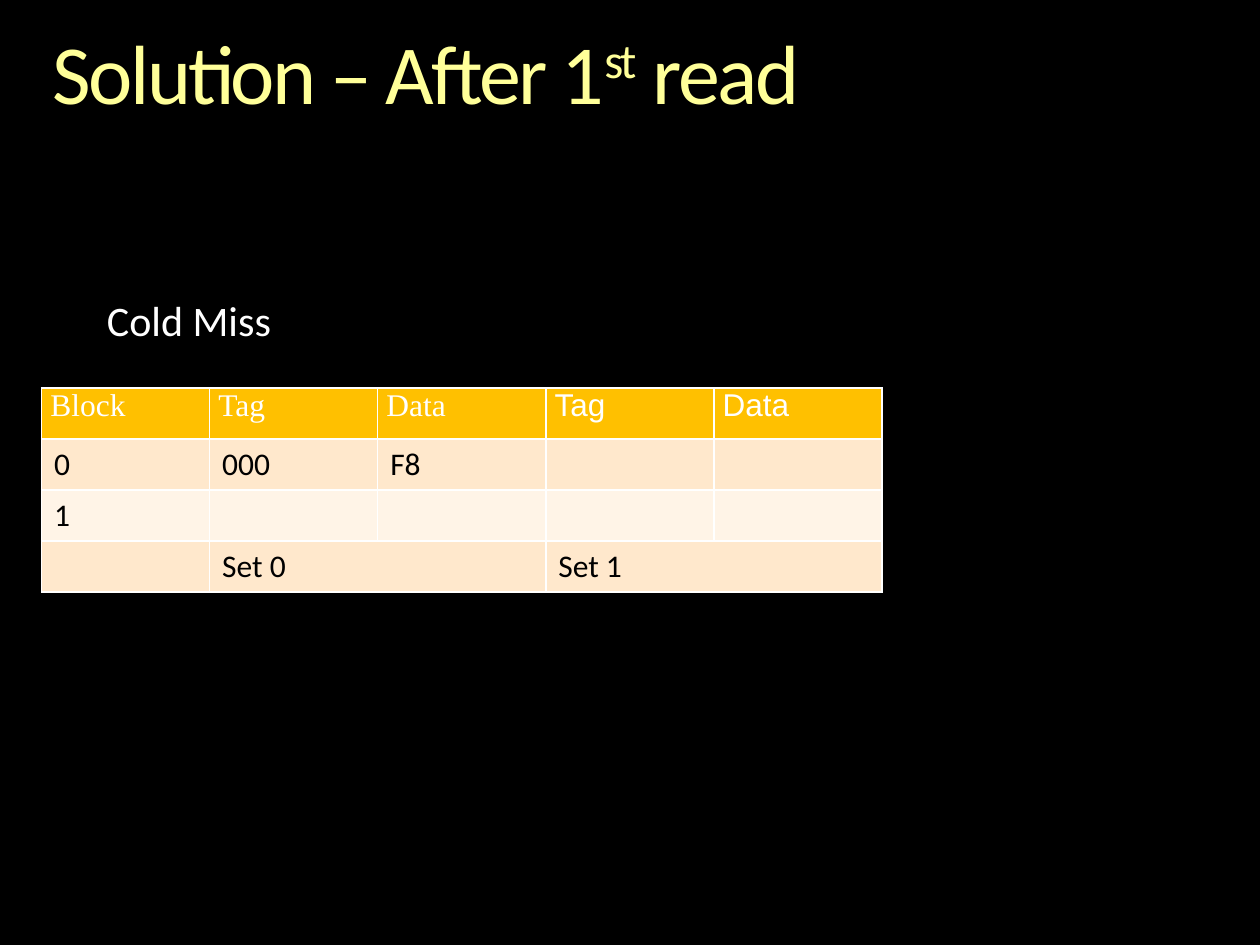
from pptx import Presentation
from pptx.dml.color import RGBColor
from pptx.enum.text import PP_ALIGN
from pptx.oxml import parse_xml
from pptx.oxml.ns import nsdecls
from pptx.util import Inches, Pt

BLACK = RGBColor(0, 0, 0)
WHITE = RGBColor(255, 255, 255)
YELLOW = RGBColor(0xFF, 0xFF, 0x99)
GOLD = RGBColor(0xFF, 0xC0, 0x00)
PEACH = RGBColor(0xFF, 0xE8, 0xCC)
CREAM = RGBColor(0xFF, 0xF4, 0xE7)

HEADS = ["Block", "Tag", "Data", "Tag", "Data"]
HEAD_FONTS = ["Times New Roman"] * 3 + ["Arial"] * 2
ROWS = [
    HEADS,
    ["0", "000", "F8", "", ""],
    ["1", "", "", "", ""],
    ["", "Set 0", "", "Set 1", ""],
]
FILLS = [GOLD, PEACH, CREAM, PEACH]


def style(font, size, color, name="Calibri"):
    font.size = Pt(size)
    font.color.rgb = color
    font.name = name


def add_box(slide, left, top, width, height):
    box = slide.shapes.add_textbox(
        Inches(left), Inches(top), Inches(width), Inches(height))
    box.text_frame.word_wrap = True
    return box.text_frame


def add_title(slide):
    frame = add_box(slide, 0.42, 0.25, 9.17, 0.73)
    frame.margin_left = frame.margin_right = 0
    frame.margin_top = frame.margin_bottom = 0
    line = frame.paragraphs[0]
    line.line_spacing = 0.9
    for text in ("Solution – After 1", "st", " read"):
        run = line.add_run()
        run.text = text
        style(run.font, 48, YELLOW)
        props = run.font._element
        props.set("spc", "-150")
        if text == "st":
            props.set("baseline", "30000")


def add_label(slide):
    frame = add_box(slide, 0.75, 2.29, 3.58, 0.5)
    frame.text = "Cold Miss"
    style(frame.paragraphs[0].runs[0].font, 24, WHITE)


def add_edges(cell):
    """Draw a thin white line on each side of the cell."""
    props = cell._tc.get_or_add_tcPr()
    for spot, side in enumerate(("lnL", "lnR", "lnT", "lnB")):
        props.insert(spot, parse_xml(
            f'<a:{side} {nsdecls("a")} w="{Pt(1)}"><a:solidFill>'
            f'<a:srgbClr val="{WHITE}"/></a:solidFill></a:{side}>'))


def fill_cell(cell, text, fill, color, name):
    cell.text = text
    cell.fill.solid()
    cell.fill.fore_color.rgb = fill
    add_edges(cell)
    line = cell.text_frame.paragraphs[0]
    style(line.font, 18, color, name)
    for run in line.runs:
        style(run.font, 18, color, name)


def pad_head(cell):
    cell.margin_left = cell.margin_right = Inches(0.07)
    cell.margin_top = cell.margin_bottom = 0
    line = cell.text_frame.paragraphs[0]
    line.alignment = PP_ALIGN.JUSTIFY
    line.space_after = Pt(4)


def add_cache(slide):
    table = slide.shapes.add_table(
        len(ROWS), len(HEADS), Inches(0.33), Inches(3.08),
        Inches(6.67), Inches(1.62)).table
    for r, (texts, fill) in enumerate(zip(ROWS, FILLS)):
        for c, text in enumerate(texts):
            cell = table.cell(r, c)
            if r == 0:
                fill_cell(cell, text, fill, WHITE, HEAD_FONTS[c])
                pad_head(cell)
            else:
                fill_cell(cell, text, fill, BLACK, "Calibri")
    for c in (1, 3):
        table.cell(3, c).merge(table.cell(3, c + 1))


def main():
    deck = Presentation()
    deck.slide_width = Inches(10)
    deck.slide_height = Inches(7.5)
    slide = deck.slides.add_slide(deck.slide_layouts[6])
    slide.background.fill.solid()
    slide.background.fill.fore_color.rgb = BLACK
    add_title(slide)
    add_cache(slide)
    add_label(slide)
    deck.save("out.pptx")


if __name__ == "__main__":
    main()
